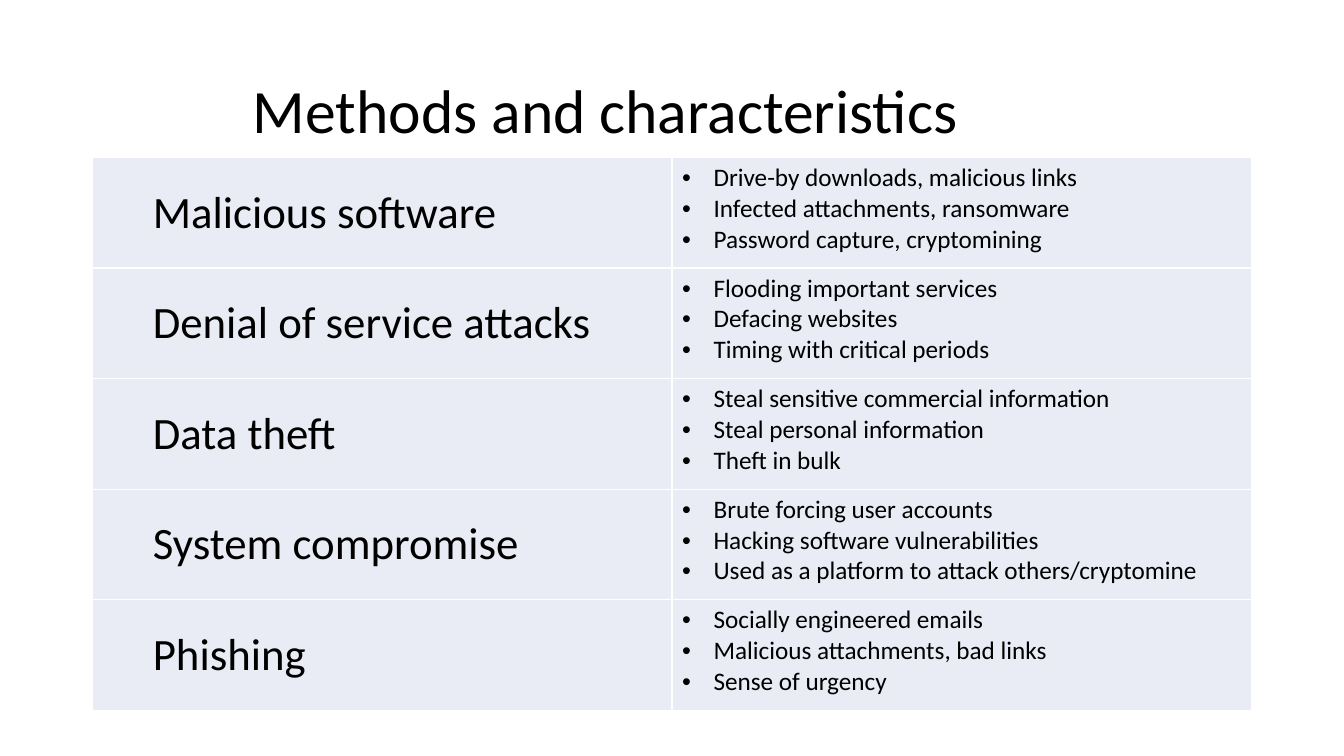
from lxml.etree import SubElement
from pptx import Presentation
from pptx.dml.color import RGBColor
from pptx.enum.text import MSO_ANCHOR as Anchor
from pptx.oxml.ns import qn
from pptx.util import Pt

FONT = "Calibri"
BLACK, WHITE, CELL_FILL = "000000", "FFFFFF", "E9EBF5"
METHODS = [
    ("Malicious software", [
        "Drive-by downloads, malicious links",
        "Infected attachments, ransomware",
        "Password capture, cryptomining"]),
    ("Denial of service attacks", [
        "Flooding important services",
        "Defacing websites",
        "Timing with critical periods"]),
    ("Data theft", [
        "Steal sensitive commercial information",
        "Steal personal information",
        "Theft in bulk"]),
    ("System compromise", [
        "Brute forcing user accounts",
        "Hacking software vulnerabilities",
        "Used as a platform to attack others/cryptomine"]),
    ("Phishing", [
        "Socially engineered emails",
        "Malicious attachments, bad links",
        "Sense of urgency"]),
]


def color(hex_string):
    return RGBColor.from_string(hex_string)


def style_font(paragraph, size):
    paragraph.font.name = FONT
    paragraph.font.size = Pt(size)
    paragraph.font.color.rgb = color(BLACK)


def set_indent(paragraph, left, first_line=0, bullet=None):
    """Set the margin and hanging indent in points, with an optional bullet."""
    properties = paragraph._p.get_or_add_pPr()
    properties.set("marL", str(Pt(left)))
    properties.set("indent", str(Pt(first_line)))
    if bullet:
        SubElement(properties, qn("a:buFont"), typeface="Arial")
        SubElement(properties, qn("a:buChar"), char=bullet)


def style_cell(cell):
    """Draw thin white borders and a pale fill."""
    properties = cell._tc.get_or_add_tcPr()
    for side in ("lnL", "lnR", "lnT", "lnB"):
        line = SubElement(properties, qn(f"a:{side}"), w=str(Pt(1)))
        fill = SubElement(line, qn("a:solidFill"))
        SubElement(fill, qn("a:srgbClr"), val=WHITE)
    cell.fill.solid()
    cell.fill.fore_color.rgb = color(CELL_FILL)


def add_title(slide, text, left, top, width, height):
    frame = slide.shapes.add_textbox(
        Pt(left), Pt(top), Pt(width), Pt(height)).text_frame
    frame.word_wrap = True
    frame.vertical_anchor = Anchor.MIDDLE
    paragraph = frame.paragraphs[0]
    paragraph.text = text
    paragraph.line_spacing = 0.9
    style_font(paragraph, 44)


def fill_method_cell(cell, method):
    style_cell(cell)
    cell.vertical_anchor = Anchor.MIDDLE
    cell.text = method
    paragraph = cell.text_frame.paragraphs[0]
    paragraph.level = 1
    set_indent(paragraph, 36)
    style_font(paragraph, 32)


def fill_traits_cell(cell, traits):
    style_cell(cell)
    cell.text = "\n".join(traits)
    for paragraph in cell.text_frame.paragraphs:
        set_indent(paragraph, 22.5, -22.5, "•")
        style_font(paragraph, 18)


def add_methods_table(slide, methods, left, top, width, height):
    table = slide.shapes.add_table(
        len(methods), 2, Pt(left), Pt(top), Pt(width), Pt(height)).table
    table.first_row = table.horz_banding = False
    for row, (method, traits) in enumerate(methods):
        fill_method_cell(table.cell(row, 0), method)
        fill_traits_cell(table.cell(row, 1), traits)


def main():
    presentation = Presentation()
    presentation.slide_width, presentation.slide_height = Pt(960), Pt(540)
    slide = presentation.slides.add_slide(presentation.slide_layouts[6])
    add_title(slide, "Methods and characteristics", 173.5, 28.8, 720.7, 104.4)
    add_methods_table(slide, METHODS, 66, 112.5, 828, 395)
    presentation.save("out.pptx")


if __name__ == "__main__":
    main()
